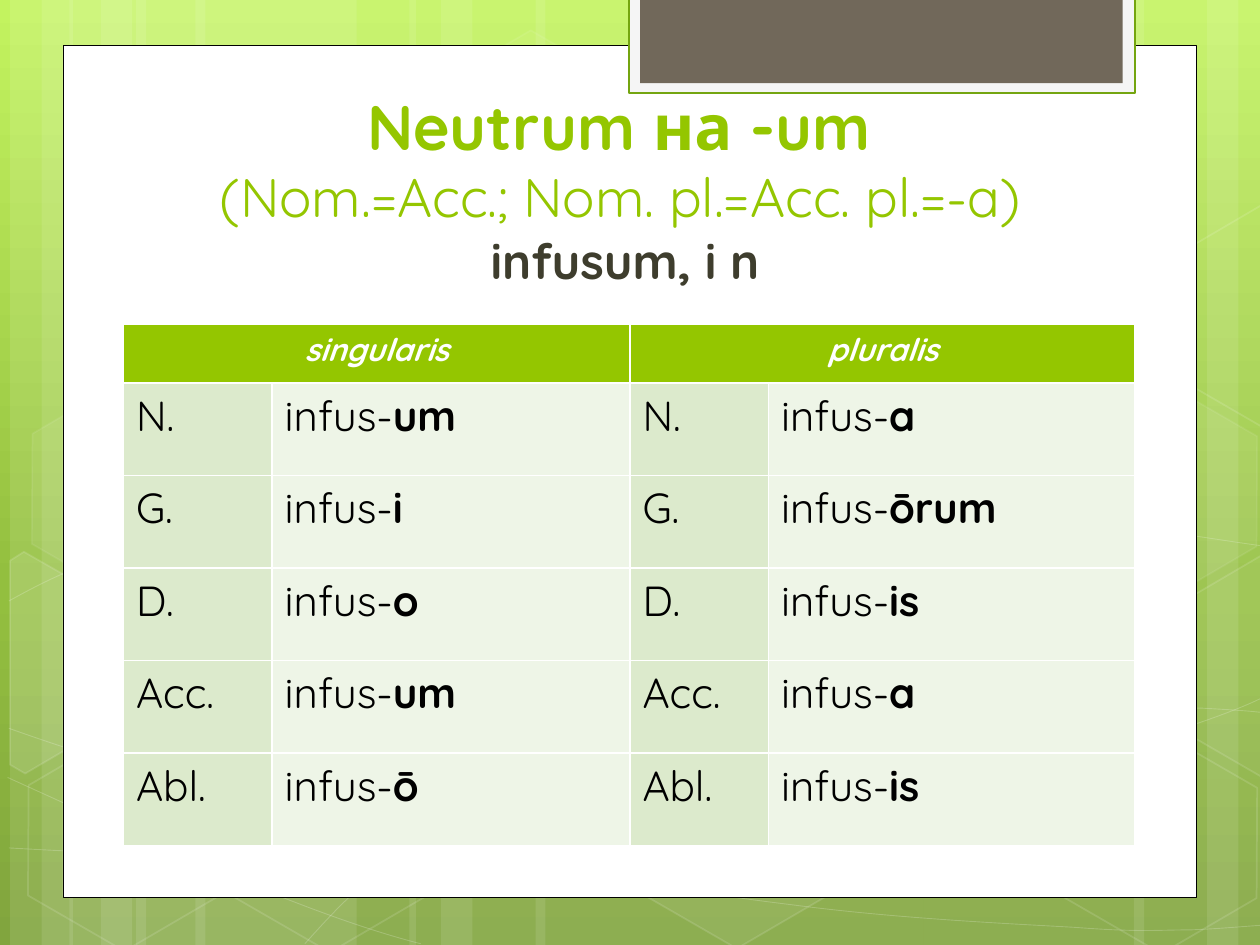
from collections import namedtuple
from copy import deepcopy

from lxml.etree import SubElement
from pptx import Presentation
from pptx.dml.color import RGBColor
from pptx.enum.shapes import MSO_SHAPE as Preset
from pptx.enum.text import MSO_ANCHOR as Anchor, PP_ALIGN as Align
from pptx.oxml.ns import qn
from pptx.util import Inches, Pt

Box = namedtuple("Box", "left top width height")
FONT = "Quicksand"
COLORS = {
    "sky": "C3F35F", "leaf": "93BF3F", "moss": "81A53E",
    "white": "FFFFFF", "black": "000000", "lime": "94C600",
    "olive": "3E3D2D", "tab": "F5F5F5", "tab_edge": "74A510",
    "taupe": "71685A", "case": "DCEACC", "form": "EEF5E7",
}
STRIPS = [
    (1.08, 1.75), (0.08, 0.5), (0.33, 0.83), (1.55, 1.75), (0.55, 0.5), (0.8, 0.83),
    (7.33, 1.75), (9.58, 0.5), (9, 0.83), (4.25, 3.08), (3.25, 0.5), (3.5, 0.83),
]
WAVES = [
    [(0.07, 6.73), (0.61, 6.76), (1.15, 6.79), (1.9, 6.78), (2.65, 6.77), (3.58, 6.75),
     (4.58, 6.65), (5.58, 6.55), (7, 6.36), (7.92, 6.17), (8.83, 5.98), (9.77, 5.68),
     (10.07, 5.51)],
    [(0.07, 4.77), (0.36, 4.61), (0.65, 4.46), (1.21, 4.31), (1.78, 4.16), (2.59, 3.94),
     (3.47, 3.87), (4.36, 3.8), (5.44, 3.79), (6.54, 3.87), (7.64, 3.95), (9.47, 4.26),
     (10.07, 4.34)],
    [(0.06, 6.17), (1.27, 6.72), (2.47, 7.27), (3.34, 7.49)],
    [(0.07, 5.78), (0.38, 5.89), (0.7, 6), (1.28, 6.16), (1.86, 6.31), (2.73, 6.56),
     (3.57, 6.73), (4.4, 6.9), (5.45, 7.08), (6.28, 7.18), (7.11, 7.29), (8, 7.33),
     (8.53, 7.36), (9.05, 7.4), (9.19, 7.38), (9.45, 7.38), (9.71, 7.37), (9.89, 7.35),
     (10.07, 7.34)],
    [(2.42, 7.49), (2.6, 7.29), (2.78, 7.09), (3.02, 6.91), (3.26, 6.73), (3.6, 6.53),
     (3.88, 6.39), (4.16, 6.25), (4.33, 6.19), (4.7, 6.09), (5.06, 5.99), (5.73, 5.85),
     (6.08, 5.78), (6.44, 5.71), (6.49, 5.71), (6.8, 5.69), (7.11, 5.66), (7.6, 5.63),
     (7.94, 5.62), (8.29, 5.61), (8.86, 5.62), (8.86, 5.62), (9.08, 5.62), (9.31, 5.62),
     (9.53, 5.62), (9.71, 5.63), (9.88, 5.64), (9.97, 5.65), (10.06, 5.66), (10.03, 5.65),
     (10.06, 5.66)],
]
HEXAGONS = [
    (3.34, 0.36, 4, 8), (4.97, 5.89, 6, 12), (0.11, 5.91, 0, 12), (0.14, 3.12, 7, 8),
    (1.74, 5.92, 0, 12), (7.53, 4.53, 10, 12), (8.34, 5.93, 0, 12), (8.34, 3.14, 7, 8),
]
CUT_HEXAGONS = [
    ([(0.08, 4.45), (0.19, 4.38), (0.96, 4.82), (0.95, 5.7), (0.2, 6.14), (0.08, 6.07)], 10),
    ([(9.26, 4.85), (10.01, 4.41), (10.09, 4.46), (10.09, 6.13), (10.02, 6.17), (9.26, 5.73)], 4),
    ([(9.26, 2.07), (10.01, 1.63), (10.1, 1.68), (10.09, 3.35), (10.02, 3.39), (9.26, 2.95)], 0),
]
COLUMNS = [1.18, 2.84, 1.1, 2.91]
HEADER_HEIGHT = 0.47
STEM = "infus-"
DECLENSION = [
    ("N.", "um", "a"), ("G.", "i", "ōrum"), ("D.", "o", "is"),
    ("Acc.", "um", "a"), ("Abl.", "ō", "is"),
]


def rgb(name):
    return RGBColor.from_string(COLORS[name])


def paint(fill, color, alpha=100):
    if not alpha:
        fill.background()
        return
    fill.solid()
    fill.fore_color.rgb = rgb(color)
    if alpha < 100:
        solid = fill._xPr.find(qn("a:solidFill"))
        SubElement(solid[0], qn("a:alpha"), val=str(alpha * 1000))


def style(shape, fill="white", alpha=100, line=None, width=1, line_alpha=100):
    shape.shadow.inherit = False
    paint(shape.fill, fill, alpha)
    if line:
        shape.line.width = Pt(width)
        paint(shape.line.fill, line, line_alpha)
    else:
        shape.line.fill.background()


def add_preset(slide, preset, box, **look):
    shape = slide.shapes.add_shape(preset, *map(Inches, box))
    style(shape, **look)
    return shape


def add_outline(slide, box, points, close, **look):
    start, *rest = [(Inches(box.left + x), Inches(box.top + y)) for x, y in points]
    builder = slide.shapes.build_freeform(*start, scale=1.0)
    builder.add_line_segments(rest, close=close)
    shape = builder.convert_to_shape()
    style(shape, **look)
    return shape


def curve_segments(shape):
    outline = shape._element.find(".//" + qn("a:path"))
    segments = outline.findall(qn("a:lnTo"))
    for first in range(0, len(segments), 3):
        curve = SubElement(outline, qn("a:cubicBezTo"))
        for segment in segments[first:first + 3]:
            curve.append(segment[0])
            outline.remove(segment)


def add_run(paragraph, text, size, color, **formats):
    run = paragraph.add_run()
    run.text = text
    values = {"name": FONT, "size": Pt(size), "bold": False, **formats}
    for attribute, value in values.items():
        setattr(run.font, attribute, value)
    run.font.color.rgb = rgb(color)


def add_text_area(slide, box, anchor):
    frame = slide.shapes.add_textbox(*map(Inches, box)).text_frame
    for attribute, value in {"word_wrap": True, "vertical_anchor": anchor}.items():
        setattr(frame, attribute, value)
    paragraph = frame.paragraphs[0]
    paragraph.alignment = Align.CENTER
    return paragraph


def fill_background(slide):
    fill = slide.background.fill
    fill.gradient()
    fill.gradient_angle = 270
    stop_list = slide.element.find(".//" + qn("a:gsLst"))
    stop_list.append(deepcopy(stop_list[-1]))
    stops = [("sky", 0), ("leaf", 0.62), ("moss", 1)]
    for stop, (color, position) in zip(fill.gradient_stops, stops):
        stop.color.rgb = rgb(color)
        stop.position = position


def draw_backdrop(slide, box):
    for x, width in STRIPS:
        add_preset(slide, Preset.RECTANGLE, Box(box.left + x, box.top, width, box.height), alpha=10)
    for points in WAVES:
        wave = add_outline(slide, box, points, False, alpha=0, line="white", width=0.5, line_alpha=20)
        curve_segments(wave)
    for x, y, alpha, line_alpha in HEXAGONS:
        hexagon = add_preset(slide, Preset.HEXAGON, Box(box.left + x, box.top + y, 1.75, 1.52),
                             alpha=alpha, line="white", line_alpha=line_alpha)
        hexagon.rotation = 30
        hexagon.adjustments[0] = 0.285
    for corners, alpha in CUT_HEXAGONS:
        add_outline(slide, box, corners, True, alpha=alpha, line="white", line_alpha=12)


def draw_panel(slide, box):
    add_preset(slide, Preset.RECTANGLE, box, line="black", width=0.5)
    tab = Box(box.left + 4.49, box.top - 0.38, 4.02, 0.76)
    add_preset(slide, Preset.RECTANGLE, tab, fill="tab", line="tab_edge", width=1.25)
    inset = Box(tab.left + 0.09, tab.top, tab.width - 0.19, tab.height - 0.08)
    add_preset(slide, Preset.RECTANGLE, inset, fill="taupe")


def draw_heading(slide, box):
    title = add_text_area(slide, Box(box.left, box.top, box.width, 1.57), Anchor.BOTTOM)
    add_run(title, "Neutrum на -um ", 36, "lime", bold=True)
    title.add_line_break()
    add_run(title, "(Nom.=Acc.; Nom. pl.=Acc. pl.=-a) ", 31, "lime")
    example = add_text_area(slide, Box(box.left + 0.08, box.top + 1.49, 7.41, 0.71), Anchor.TOP)
    example.space_before = Pt(5.6)
    example._p.get_or_add_pPr().set("marL", str(Inches(0.07)))
    add_run(example, "infusum, i n", 28, "olive", bold=True)


def draw_declension(slide, box):
    rows = len(DECLENSION) + 1
    table = slide.shapes.add_table(rows, len(COLUMNS), *map(Inches, box)).table
    for column, width in zip(table.columns, COLUMNS):
        column.width = Inches(width)
    for row in table.rows:
        row.height = Inches((box.height - HEADER_HEIGHT) / len(DECLENSION))
    table.rows[0].height = Inches(HEADER_HEIGHT)
    for column, number in ((0, "singularis"), (2, "pluralis")):
        header = table.cell(0, column)
        header.merge(table.cell(0, column + 1))
        paint(header.fill, "lime")
        paragraph = header.text_frame.paragraphs[0]
        paragraph.alignment = Align.CENTER
        add_run(paragraph, number, 18, "white", bold=True, italic=True)
    for row, (case, *endings) in enumerate(DECLENSION, 1):
        for index, ending in enumerate(endings):
            label, form = (table.cell(row, 2 * index + part) for part in (0, 1))
            paint(label.fill, "case")
            paint(form.fill, "form")
            add_run(label.text_frame.paragraphs[0], case, 24, "black")
            add_run(form.text_frame.paragraphs[0], STEM, 24, "black")
            add_run(form.text_frame.paragraphs[0], ending, 24, "black", bold=True)


def main():
    deck = Presentation()
    deck.slide_width, deck.slide_height = Inches(10), Inches(7.5)
    slide = deck.slides.add_slide(deck.slide_layouts[6])
    fill_background(slide)
    draw_backdrop(slide, Box(0, 0, 10, 7.5))
    draw_panel(slide, Box(0.5, 0.36, 9, 6.76))
    draw_declension(slide, Box(0.98, 2.57, sum(COLUMNS), 4.14))
    draw_heading(slide, Box(1.14, 0.29, 7.68, 2.2))
    deck.save("out.pptx")


if __name__ == "__main__":
    main()
